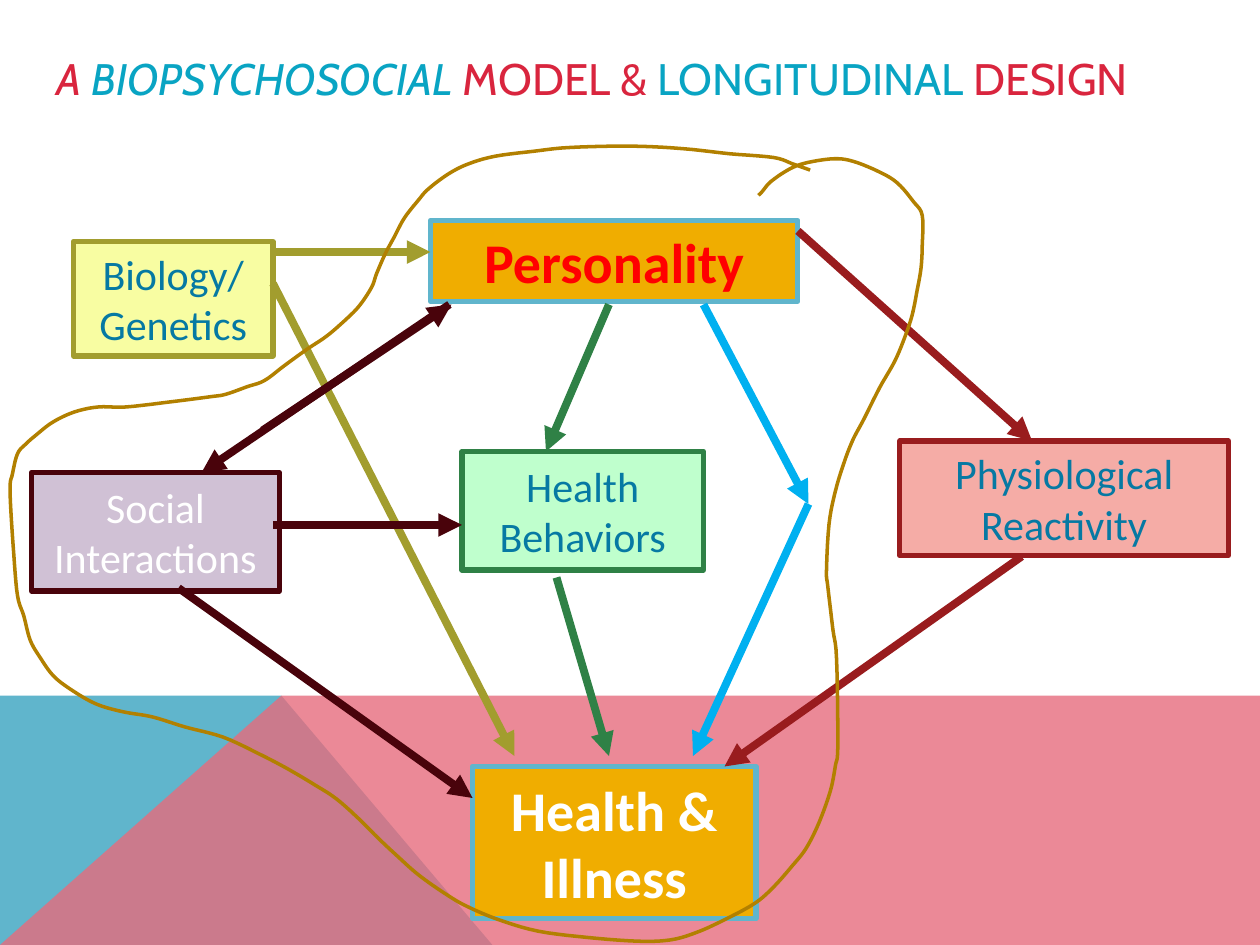
import pptx
import pptx.util
import pptx.dml.color
import pptx.enum.shapes
import pptx.enum.text
import pptx.oxml.ns
import pptx.oxml.xmlchemy
from dataclasses import dataclass
from typing import NamedTuple

COLS, ROWS = 120, 90
WIDE = pptx.util.Inches(10)
TALL = pptx.util.Inches(7.5)


@dataclass(frozen=True)
class Theme:
    head: str = "Cabin"
    body: str = "Calibri"
    title: float = 25.2
    large: int = 32
    small: int = 24
    edge: float = 3
    arrow: float = 4.5
    curve: float = 2
    gold: str = "F0AD00"
    sky: str = "60B5CC"
    rose: str = "E66C7D"
    crimson: str = "D9253E"
    teal: str = "09A4C3"
    ink: str = "0679A3"
    red: str = "FF0000"
    white: str = "FFFFFF"
    green: str = "2F8146"
    mint: str = "BFFFCD"
    brick: str = "991C1E"
    blush: str = "F5ACA6"
    olive: str = "A29D2E"
    lemon: str = "F8FDA2"
    wine: str = "49030B"
    lilac: str = "D0C1D5"
    blue: str = "00B0F0"
    bronze: str = "B28000"


T = Theme()


class Box(NamedTuple):
    text: str
    col: float
    row: float
    cols: float
    rows: float
    fill: str
    edge: str
    ink: str
    size: int
    bold: bool = False


class Arrow(NamedTuple):
    tail: tuple
    head: tuple
    color: str


class Word(NamedTuple):
    text: str
    color: str
    slant: bool = False


BOXES = [
    Box("Personality", 41, 21, 35, 7.7, T.gold, T.sky, T.red, T.large, True),
    Box("Health & Illness", 45, 73, 27, 14.5, T.gold, T.sky, T.white, T.large, True),
    Box("Health Behaviors", 44, 43, 23, 11.3, T.mint, T.green, T.ink, T.small),
    Box("Physiological Reactivity", 85.7, 42, 31.3, 10.9, T.blush, T.brick, T.ink, T.small),
    Box("Biology/ Genetics", 7, 23, 19, 10.9, T.lemon, T.olive, T.ink, T.small),
    Box("Social Interactions", 3, 45, 23.6, 11.3, T.lilac, T.wine, T.white, T.small),
]

ARROWS = [
    Arrow((58, 29), (52, 43), T.green),
    Arrow((53, 55), (58, 72), T.green),
    Arrow((76, 22), (98.3, 42), T.brick),
    Arrow((97.3, 53), (69, 73), T.brick),
    Arrow((26, 24), (41, 24), T.olive),
    Arrow((26, 27), (49, 72), T.olive),
    Arrow((42.8, 29), (19.2, 45), T.wine),
    Arrow((17, 56), (45, 76), T.wine),
    Arrow((67, 29), (77, 48), T.blue),
    Arrow((26, 50), (44, 50), T.wine),
    Arrow((25, 41), (43, 29), T.wine),
    Arrow((77, 48), (66, 72), T.blue),
]

TITLE = [
    Word("A ", T.crimson, True),
    Word("BIOPSYCHOSOCIAL", T.teal, True),
    Word(" MODEL & ", T.crimson),
    Word("LONGITUDINAL", T.teal),
    Word(" DESIGN", T.crimson),
]

LOOP = [
    (64.3, 13.5), (62.9, 13), (61.4, 12.5), (57.9, 12.2), (54.2, 11.8), (50.2, 11.6),
    (45.3, 11.7), (42.4, 12), (39.3, 12.4), (37.2, 13), (35.6, 13.8), (34, 15),
    (33.2, 15.9), (32.1, 17.3), (31.3, 18.8), (30.6, 20.1), (29.9, 21.7), (29.5, 22.8),
    (28.5, 24.3), (27.3, 25.5), (25.9, 26.7), (24.4, 27.7), (22.6, 29), (21, 30.2),
    (19.6, 30.7), (17.9, 31.3), (16.6, 31.5), (13.5, 31.9), (10, 32.3), (7.8, 32.3),
    (5.9, 32.7), (4.2, 33.5), (2.9, 34.5), (2.1, 35.2), (1.4, 36), (1, 37.6),
    (0.8, 39), (1.1, 44), (1.4, 47.3), (1.9, 48.9), (2.4, 50.8), (3.2, 52.2),
    (4.3, 53.7), (5.9, 54.9), (7.7, 55.9), (9.8, 56.5), (12.1, 56.9), (14.7, 57.7),
    (17.7, 58.5), (20.5, 59.8), (22.8, 61), (25, 62.3), (26.7, 63.4), (28.5, 65),
    (30, 66.5), (31.6, 68), (33.3, 69.5), (35.6, 71.1), (37.2, 72), (39.6, 73),
    (42.7, 73.9), (46.6, 74.4), (50.6, 74.7), (53.2, 74.6), (55.3, 74), (57.5, 73),
    (59.9, 71.7), (61.4, 70.4), (62.9, 68.7), (64, 67.3), (65, 65.3), (65.9, 62.8),
    (66.3, 60.8), (66.5, 59.2), (66.4, 52.3), (66.1, 49.9), (65.7, 46.5), (65.6, 45.3),
    (65.8, 41.6), (66.3, 39), (67, 36.7), (67.7, 34.9), (68.6, 33.2), (69.8, 30.8),
    (71, 28.7), (71.8, 26.8), (72.4, 25), (72.8, 23), (73.1, 21.3), (73.2, 19.5),
    (73.2, 17.1), (72.5, 16), (71.2, 14.5), (69.7, 13.6), (67.7, 12.8), (66.2, 12.6),
    (64.1, 12.9), (62.7, 13.4), (61.2, 14.4), (60.5, 15.2), (60.2, 15.5),
]


def rgb(tint: str):
    return pptx.dml.color.RGBColor.from_string(tint)


def across(col: float) -> int:
    return round(WIDE * col / COLS)


def down(row: float) -> int:
    return round(TALL * row / ROWS)


def blend(a: float, b: float, c: float, d: float, t: float) -> float:
    return b + t * (c - a + t * (2 * a - 5 * b + 4 * c - d + t * (3 * (b - c) + d - a))) / 2


def smooth(knots: list, steps: int = 5) -> list:
    padded = [knots[0], *knots, knots[-1]]
    dots = [tuple(blend(*axis, n / steps) for axis in zip(*padded[i:i + 4]))
            for i in range(len(knots) - 1) for n in range(steps)]
    return dots + [knots[-1]]


def outline(slide, dots: list, closed: bool):
    pen = slide.shapes.build_freeform(*dots[0], scale=1.0)
    pen.add_line_segments(dots[1:], close=closed)
    shape = pen.convert_to_shape()
    shape.shadow.inherit = False
    return shape


def panel(slide, cells: list, tint: str, share: int = 100) -> None:
    shape = outline(slide, [(across(c), down(r)) for c, r in cells], True)
    shape.fill.solid()
    shape.fill.fore_color.rgb = rgb(tint)
    shape.line.fill.background()
    if share < 100:
        color = shape._element.spPr.find(".//" + pptx.oxml.ns.qn("a:srgbClr"))
        alpha = pptx.oxml.xmlchemy.OxmlElement("a:alpha")
        alpha.set("val", str(share * 1000))
        color.append(alpha)


def heading(slide, words: list) -> None:
    frame = slide.shapes.add_textbox(across(4.2), down(4.4), across(115), down(6)).text_frame
    frame.word_wrap = True
    frame.vertical_anchor = pptx.enum.text.MSO_ANCHOR.MIDDLE
    for word in words:
        run = frame.paragraphs[0].add_run()
        run.text = word.text
        run.font.name, run.font.size = T.head, pptx.util.Pt(T.title)
        run.font.italic = word.slant
        run.font.color.rgb = rgb(word.color)


def block(slide, box: Box) -> None:
    shape = slide.shapes.add_shape(
        pptx.enum.shapes.MSO_SHAPE.RECTANGLE,
        across(box.col), down(box.row), across(box.cols), down(box.rows))
    shape.shadow.inherit = False
    shape.fill.solid()
    shape.fill.fore_color.rgb = rgb(box.fill)
    shape.line.color.rgb = rgb(box.edge)
    shape.line.width = pptx.util.Pt(T.edge)
    frame = shape.text_frame
    frame.word_wrap = True
    frame.text = box.text
    line = frame.paragraphs[0]
    line.alignment = pptx.enum.text.PP_ALIGN.CENTER
    font = line.runs[0].font
    font.name, font.size, font.bold = T.body, pptx.util.Pt(box.size), box.bold
    font.color.rgb = rgb(box.ink)


def link(slide, arrow: Arrow) -> None:
    (col, row), (end, base) = arrow.tail, arrow.head
    line = slide.shapes.add_connector(
        pptx.enum.shapes.MSO_CONNECTOR.STRAIGHT,
        across(col), down(row), across(end), down(base))
    line.line.color.rgb = rgb(arrow.color)
    line.line.width = pptx.util.Pt(T.arrow)
    tip = pptx.oxml.xmlchemy.OxmlElement("a:tailEnd")
    tip.set("type", "triangle")
    line.line._get_or_add_ln().append(tip)
    line._element.spPr.append(pptx.oxml.xmlchemy.OxmlElement("a:effectLst"))


def main() -> None:
    deck = pptx.Presentation()
    deck.slide_width, deck.slide_height = WIDE, TALL
    slide = deck.slides.add_slide(deck.slide_layouts[6])
    top, peak = 66.25, 26.8
    panel(slide, [(0, ROWS), (0, top), (peak, top), (46.9, ROWS)], T.sky)
    panel(slide, [(0, ROWS), (peak, top), (COLS, top), (COLS, ROWS)], T.rose, 80)
    heading(slide, TITLE)
    for box in BOXES:
        block(slide, box)
    for arrow in ARROWS:
        link(slide, arrow)
    loop = outline(slide, [(WIDE * x / 100, WIDE * y / 100) for x, y in smooth(LOOP)], False)
    loop.fill.background()
    loop.line.color.rgb = rgb(T.bronze)
    loop.line.width = pptx.util.Pt(T.curve)
    deck.save("out.pptx")


if __name__ == "__main__":
    main()
